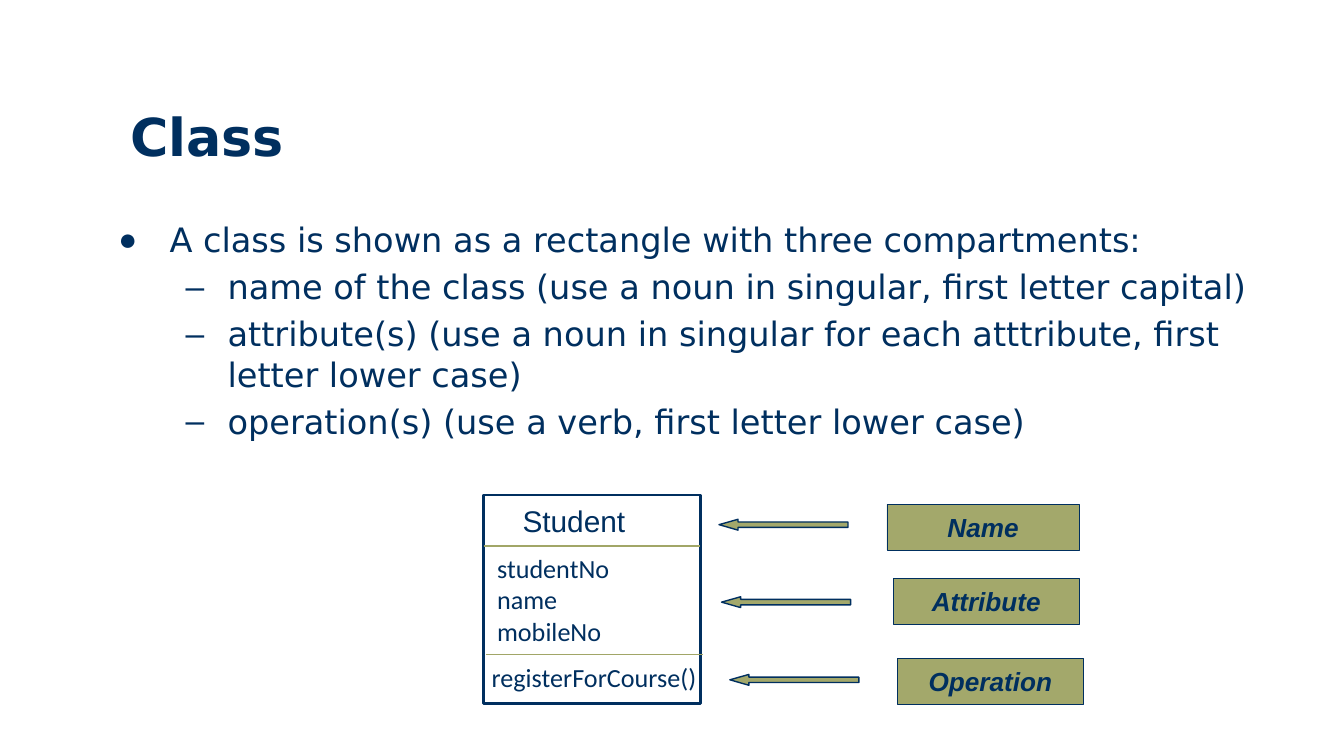
import dataclasses

import lxml.etree
import pptx
import pptx.dml.color
import pptx.enum.shapes
import pptx.enum.text
import pptx.oxml.ns
import pptx.util

Pt = pptx.util.Pt
Kind = pptx.enum.shapes.MSO_SHAPE
Anchor = pptx.enum.text.MSO_ANCHOR
Align = pptx.enum.text.PP_ALIGN
qn = pptx.oxml.ns.qn


def rgb(code):
    return pptx.dml.color.RGBColor.from_string(code)


@dataclasses.dataclass(frozen=True)
class Theme:
    navy = rgb("002F5F")
    olive = rgb("A3A86B")
    rule = rgb("A1A667")
    white = rgb("FFFFFF")
    main = "DejaVu Sans"
    sans = "Arial"
    code = "Calibri"
    title = Pt(28)
    body = Pt(18)
    name = Pt(16)
    small = Pt(14)


theme = Theme()


def write(frame, lines, face, size, bold=None, italic=None):
    """Fill a frame with one paragraph per line, and return the paragraphs."""
    frame.word_wrap = True
    frame.auto_size = pptx.enum.text.MSO_AUTO_SIZE.NONE
    for i, line in enumerate(lines):
        para = frame.add_paragraph() if i else frame.paragraphs[0]
        run = para.add_run()
        run.text = line
        font = run.font
        font.name, font.size = face, size
        font.bold, font.italic = bold, italic
        font.color.rgb = theme.navy
    return frame.paragraphs


deck = pptx.Presentation()
deck.slide_width, deck.slide_height = Pt(720), Pt(405)
slide = deck.slides.add_slide(deck.slide_layouts[1])
shapes = slide.shapes

# Title
title = shapes.title
title.left, title.top, title.width, title.height = Pt(62.6), Pt(49.2), Pt(657), Pt(47)
title.text_frame.vertical_anchor = Anchor.MIDDLE
write(title.text_frame, ["Class"], theme.main, theme.title, bold=True)[0].alignment = Align.LEFT

# Bullet list
body = slide.placeholders[1]
body.left, body.top, body.width, body.height = Pt(56.2), Pt(106.5), Pt(629.3), Pt(255)
body.text_frame.vertical_anchor = Anchor.TOP
points = [
    "A class is shown as a rectangle with three compartments:",
    "name of the class (use a noun in singular, first letter capital)",
    "attribute(s) (use a noun in singular for each atttribute, first letter lower case)",
    "operation(s) (use a verb, first letter lower case)",
]
for i, para in enumerate(write(body.text_frame, points, theme.main, theme.body)):
    para.level = 1 if i else 0
    mark, left, hang = ("–", 58.5, 22.5) if i else ("●", 27.4, 27.4)
    props = para._p.get_or_add_pPr()
    props.set("marL", str(int(Pt(left))))
    props.set("indent", str(-int(Pt(hang))))
    if not i:
        lxml.etree.SubElement(props, qn("a:buSzPct")).set("val", "93000")
    lxml.etree.SubElement(props, qn("a:buChar")).set("char", mark)
    para.space_before = Pt(3.6 if i else 0)
    para.line_spacing = 1.0 if i else Pt(29)

# Class box with its three compartments
frame = shapes.add_shape(Kind.RECTANGLE, Pt(259.2), Pt(265.2), Pt(116.2), Pt(111.6))
frame.shadow.inherit = False
frame.fill.solid()
frame.fill.fore_color.rgb = theme.white
frame.line.color.rgb = theme.navy
frame.line.width = Pt(1.5)

parts = [
    (["Student"], 272.9, 265.7, 113, 26.6, theme.sans, theme.name),
    (["studentNo", "name", "mobileNo"], 259.2, 292.3, 93, 58.3, theme.code, theme.small),
    (["registerForCourse()"], 256.3, 350.6, 131.8, 24.5, theme.code, theme.small),
]
for lines, x, y, wide, high, face, size in parts:
    box = shapes.add_textbox(Pt(x), Pt(y), Pt(wide), Pt(high))
    write(box.text_frame, lines, face, size)

for x, y in [(259.2, 292.5), (260.5, 350.6)]:
    rule = shapes.add_connector(
        pptx.enum.shapes.MSO_CONNECTOR.STRAIGHT, Pt(x), Pt(y), Pt(x + 116), Pt(y))
    rule.line.color.rgb = theme.rule
    rule.line.width = Pt(0.75)
    lxml.etree.SubElement(rule._element.spPr, qn("a:effectLst"))

# Labels, each with an arrow to its compartment
labels = [
    ("Name", 475.2, 270.2, 103, 385.2, 278.2),
    ("Attribute", 478.6, 309.9, 99.6, 386.6, 319.7),
    ("Operation", 480.8, 352.8, 99.6, 391, 361.3),
]
for word, x, y, wide, tip, top in labels:
    label = shapes.add_shape(Kind.RECTANGLE, Pt(x), Pt(y), Pt(wide), Pt(24.5))
    label.text_frame.vertical_anchor = Anchor.MIDDLE
    para = write(label.text_frame, [word], theme.sans, theme.small, True, True)[0]
    para.alignment = Align.CENTER
    arrow = shapes.add_shape(Kind.LEFT_ARROW, Pt(tip), Pt(top), Pt(69.1), Pt(5.8))
    arrow.adjustments[0], arrow.adjustments[1] = 0.5, 1.76
    for shape, width in [(label, 0.25), (arrow, 0.75)]:
        shape.shadow.inherit = False
        shape.fill.solid()
        shape.fill.fore_color.rgb = theme.olive
        shape.line.color.rgb = theme.navy
        shape.line.width = Pt(width)

deck.save("out.pptx")
